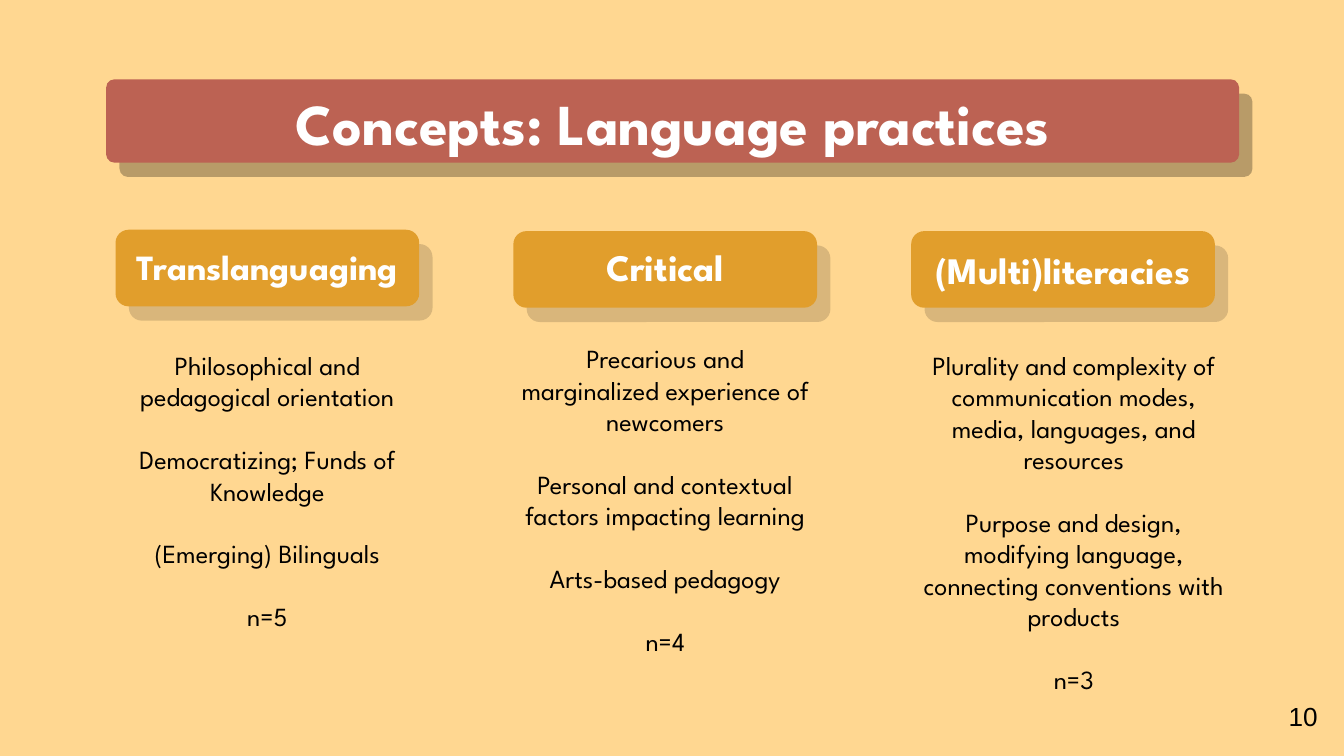
import pptx
import pptx.util
from lxml import etree
from pptx.dml.color import RGBColor
from pptx.enum.shapes import MSO_SHAPE
from pptx.enum.text import MSO_ANCHOR, MSO_AUTO_SIZE, PP_ALIGN
from pptx.oxml.ns import qn

SAND = RGBColor(0xFF, 0xD7, 0x91)
BRICK = RGBColor(0xBC, 0x62, 0x53)
OCHRE = RGBColor(0xE1, 0x9E, 0x2C)
WHITE = RGBColor(0xFF, 0xFF, 0xFF)
BLACK = RGBColor(0x00, 0x00, 0x00)
FONT = "League Spartan"
LINE_GAP = 16.8

presentation = pptx.Presentation()
presentation.slide_width = pptx.util.Inches(10)
presentation.slide_height = presentation.slide_width * 9 // 16
slide = presentation.slides.add_slide(presentation.slide_layouts[5])
slide.background.fill.solid()
slide.background.fill.fore_color.rgb = SAND


def add_plate(box, color, rounding, shadow_opacity):
    """Add a rounded plate with a hard shadow to its lower right."""
    plate = slide.shapes.add_shape(MSO_SHAPE.ROUNDED_RECTANGLE, *map(pptx.util.Inches, box))
    plate.adjustments[0] = rounding
    plate.fill.solid()
    plate.fill.fore_color.rgb = color
    plate.line.fill.background()
    plate.shadow.inherit = False
    effects = plate._element.spPr.find(qn("a:effectLst"))
    shadow = etree.SubElement(
        effects, qn("a:outerShdw"), blurRad="0", dist=str(pptx.util.Pt(10.5)),
        dir=str(47 * 60000), algn="bl", rotWithShape="0")
    shadow_color = etree.SubElement(shadow, qn("a:srgbClr"), val="000000")
    etree.SubElement(shadow_color, qn("a:alpha"), val=str(shadow_opacity * 1000))


def write_text(shape, box, paragraphs, size, color, bold=False, font=FONT,
               align=PP_ALIGN.CENTER, anchor=MSO_ANCHOR.TOP):
    """Place a text shape and fill it, one line of space between paragraphs."""
    shape.left, shape.top, shape.width, shape.height = map(pptx.util.Inches, box)
    frame = shape.text_frame
    frame.word_wrap = True
    frame.auto_size = MSO_AUTO_SIZE.NONE
    frame.vertical_anchor = anchor
    frame.margin_left = frame.margin_right = pptx.util.Inches(0.1)
    frame.margin_top = frame.margin_bottom = pptx.util.Inches(0.1)
    for index, text in enumerate(paragraphs):
        paragraph = frame.add_paragraph() if index else frame.paragraphs[0]
        paragraph.alignment = align
        paragraph.space_before = pptx.util.Pt(LINE_GAP if index else 0)
        run = paragraph.add_run()
        run.text = text
        run.font.name = font
        run.font.size = pptx.util.Pt(size)
        run.font.bold = bold
        run.font.color.rgb = color


# Title on its banner
add_plate((0.79, 0.59, 8.43, 0.62), BRICK, 0.1, 27)
title = slide.shapes.title
slide.shapes._spTree.append(title._element)
write_text(title, (0.79, 0.6, 8.43, 0.62), ["Concepts: Language practices"],
           31, WHITE, bold=True, anchor=MSO_ANCHOR.MIDDLE)

# Three concept columns: heading, heading size, plate top, heading top,
# body left, body top, body paragraphs
COLUMN_LEFT, COLUMN_STEP = 0.86, 2.96
concepts = [
    ("Translanguaging", 19, 1.71, 1.72, 0.77, 2.5, [
        "Philosophical and pedagogical orientation",
        "Democratizing; Funds of Knowledge",
        "(Emerging) Bilinguals",
        "n=5"]),
    ("Critical", 20, 1.72, 1.72, 3.73, 2.45, [
        "Precarious and marginalized experience of newcomers",
        "Personal and contextual factors impacting learning",
        "Arts-based pedagogy",
        "n=4"]),
    ("(Multi)literacies", 20, 1.72, 1.74, 6.77, 2.5, [
        "Plurality and complexity of communication modes, media, languages, and resources",
        "Purpose and design, modifying language, connecting conventions with products",
        "n=3"]),
]
for column, concept in enumerate(concepts):
    heading, heading_size, plate_top, heading_top, body_left, body_top, body = concept
    left = COLUMN_LEFT + column * COLUMN_STEP
    add_plate((left, plate_top, 2.26, 0.57), OCHRE, 0.17, 14)
    write_text(slide.shapes.add_textbox(0, 0, 0, 0), (left, heading_top, 2.26, 0.54),
               [heading], heading_size, WHITE, bold=True)
    write_text(slide.shapes.add_textbox(0, 0, 0, 0), (body_left, body_top, 2.44, 2.79),
               body, 14, BLACK)

# Slide number
write_text(slide.shapes.add_textbox(0, 0, 0, 0), (9.49, 5.11, 0.43, 0.44), ["10"],
           14, BLACK, font="Arial", align=PP_ALIGN.LEFT)

presentation.save("out.pptx")
